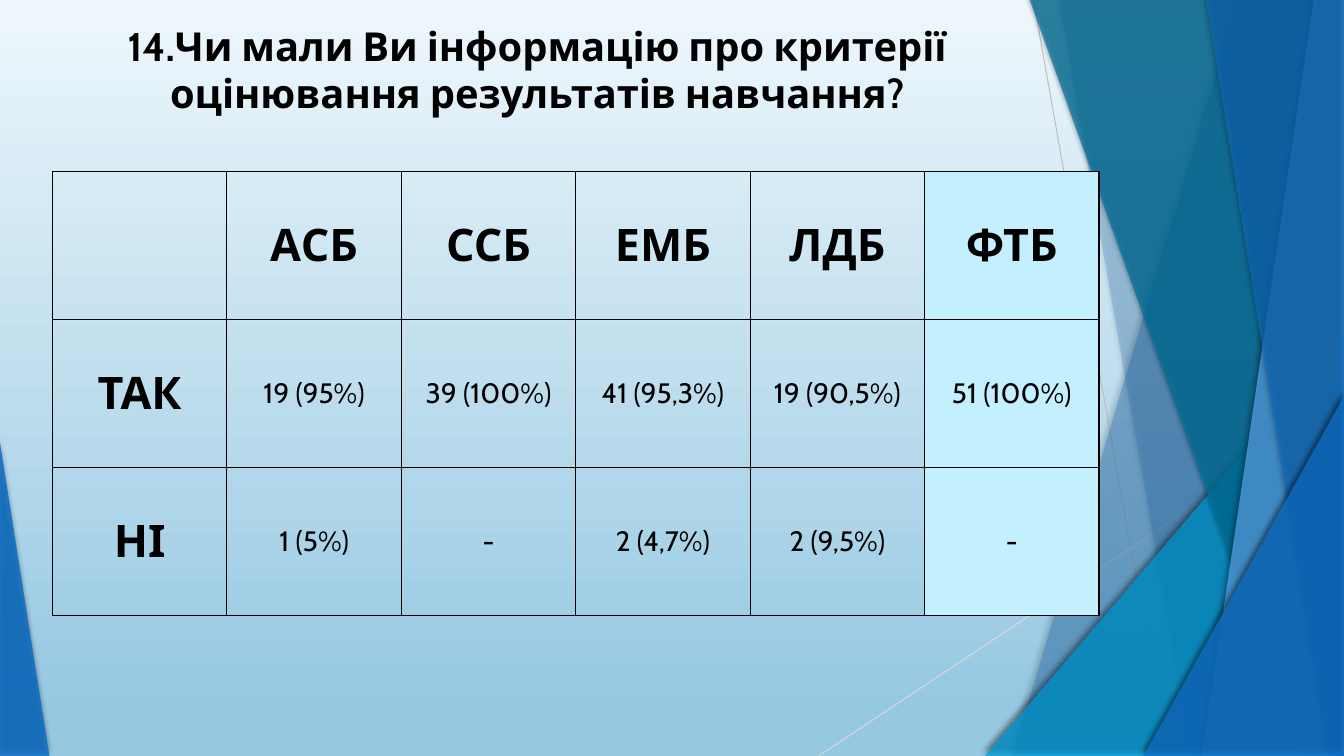
from lxml import etree
from pptx import Presentation
from pptx.dml.color import RGBColor
from pptx.enum import shapes, text
from pptx.oxml import parse_xml
from pptx.oxml.ns import nsdecls, qn
from pptx.util import Inches, Pt

BLACK = RGBColor(0x00, 0x00, 0x00)
BLUE = RGBColor(0x0F, 0x6F, 0xC6)
CYAN = RGBColor(0x00, 0x9D, 0xD9)
TEAL = RGBColor(0x00, 0x76, 0xA3)
SKY = RGBColor(0x59, 0xAA, 0xF2)
PALE = RGBColor(0xC4, 0xEF, 0xFF)
BG_BOTTOM = RGBColor(0x96, 0xC8, 0xE2)
BG_TOP = RGBColor(0xEE, 0xF7, 0xFC)
GREY = RGBColor(0xBF, 0xBF, 0xBF)
LIGHT_GREY = RGBColor(0xD9, 0xD9, 0xD9)
FONT = "Cabin"
W, H, TOP = 13.33, 7.5, -0.01

TITLE = "14.Чи мали Ви інформацію про критерії оцінювання результатів навчання?"
ANSWERS = [
    ["", "АСБ", "ССБ", "ЕМБ", "ЛДБ", "ФТБ"],
    ["ТАК", "19 (95%)", "39 (100%)", "41 (95,3%)", "19 (90,5%)", "51 (100%)"],
    ["НІ", "1 (5%)", "-", "2 (4,7%)", "2 (9,5%)", "-"],
]
COL_W, ROW_H = 1.73, 1.47

# from x, from y, to x, to y, colour
RAYS = [(10.25, 0, 11.58, H, GREY), (W, 4.03, 8.12, H, LIGHT_GREY)]
# Back to front. Band: top x, bottom x, colour, opacity %; it runs to the right edge.
# Corner: left, top, width, apex position, colour, opacity %; it stands on the bottom edge.
FACETS = [
    ("band", 12.28, 10.04, BLUE, 30),
    ("band", 10.5, 11.82, BLUE, 20),
    ("corner", 9.77, 3.33, 3.56, 1, CYAN, 72),
    ("band", 10.21, 12.91, TEAL, 70),
    ("band", 13.03, 11.92, SKY, 70),
    ("band", 11.96, 13.18, BLUE, 65),
    ("corner", 11.34, 3.93, 1.99, 1, BLUE, 80),
    ("corner", 0, 4.39, 0.49, 0, BLUE, 85),
]


def add_ray(s, x1, y1, x2, y2, color):
    line = s.shapes.add_connector(shapes.MSO_CONNECTOR.STRAIGHT, *map(Inches, (x1, y1, x2, y2)))
    line.line.color.rgb = color
    line.line.width = Pt(0.75)
    etree.SubElement(line._element.spPr, qn("a:effectLst"))


def add_band(s, top_x, bottom_x):
    points = [(Inches(x), Inches(y)) for x, y in
              [(top_x, TOP), (W, TOP), (W, H), (bottom_x, H)]]
    outline = s.shapes.build_freeform(*points[0])
    outline.add_line_segments(points[1:], close=True)
    return outline.convert_to_shape()


def add_corner(s, left, top, width, apex):
    sp = s.shapes.add_shape(shapes.MSO_SHAPE.ISOSCELES_TRIANGLE,
                            *map(Inches, (left, top, width, H - top)))
    sp.adjustments[0] = apex
    return sp


def style_facet(sp, color, opacity):
    """Give a translucent fill, no outline and a soft shadow."""
    sp.fill.solid()
    sp.fill.fore_color.rgb = color
    clr = sp._element.spPr.find(qn("a:solidFill"))[0]
    etree.SubElement(clr, qn("a:alpha"), val=str(opacity * 1000))
    sp.line.fill.background()
    sp.shadow.inherit = False
    effects = sp._element.spPr.find(qn("a:effectLst"))
    effects.append(parse_xml(
        f'<a:outerShdw {nsdecls("a")} blurRad="{Pt(4)}" dist="{Pt(3)}" dir="{245 * 60000}" '
        'algn="ctr" rotWithShape="0"><a:srgbClr val="000000"><a:alpha val="60000"/>'
        '</a:srgbClr></a:outerShdw>'))


def write(tf, words, size, bold):
    p = tf.paragraphs[0]
    p.alignment = text.PP_ALIGN.CENTER
    r = p.add_run()
    r.text = words
    r.font.name = FONT
    r.font.size = Pt(size)
    r.font.bold = bold
    r.font.color.rgb = BLACK


def set_borders(cell):
    tc_pr = cell._tc.get_or_add_tcPr()
    for i, side in enumerate("LRTB"):
        tc_pr.insert(i, parse_xml(
            f'<a:ln{side} {nsdecls("a")} w="{Pt(0.96)}"><a:solidFill>'
            f'<a:srgbClr val="{BLACK}"/></a:solidFill></a:ln{side}>'))


def add_answers(s):
    rows, cols = len(ANSWERS), len(ANSWERS[0])
    table = s.shapes.add_table(rows, cols, Inches(0.52), Inches(1.7),
                               Inches(COL_W * cols), Inches(ROW_H * rows)).table
    table.first_row = table.horz_banding = False
    for i, row in enumerate(ANSWERS):
        for j, words in enumerate(row):
            cell = table.cell(i, j)
            cell.vertical_anchor = text.MSO_ANCHOR.MIDDLE
            if j == cols - 1:
                cell.fill.solid()
                cell.fill.fore_color.rgb = PALE
            else:
                cell.fill.background()
            set_borders(cell)
            if words:
                heading = i == 0 or j == 0
                write(cell.text_frame, words, 32 if heading else 20, heading)


def main():
    prs = Presentation()
    prs.slide_width, prs.slide_height = Inches(W), Inches(H)
    s = prs.slides.add_slide(prs.slide_layouts[5])

    fill = s.background.fill
    fill.gradient()
    fill.gradient_angle = 90
    for stop, (position, color) in zip(fill.gradient_stops, [(0.06, BG_BOTTOM), (1, BG_TOP)]):
        stop.position = position
        stop.color.rgb = color

    for ray in RAYS:
        add_ray(s, *ray)
    add_facet = {"band": add_band, "corner": add_corner}
    for kind, *place, color, opacity in FACETS:
        style_facet(add_facet[kind](s, *place), color, opacity)

    title = s.shapes.title
    title.left, title.top, title.width, title.height = map(Inches, (0.52, 0.16, 9.62, 1.39))
    tf = title.text_frame
    tf.word_wrap = True
    tf.auto_size = text.MSO_AUTO_SIZE.NONE
    tf.vertical_anchor = text.MSO_ANCHOR.TOP
    write(tf, TITLE, 28.5, True)

    add_answers(s)
    prs.save("out.pptx")


if __name__ == "__main__":
    main()
